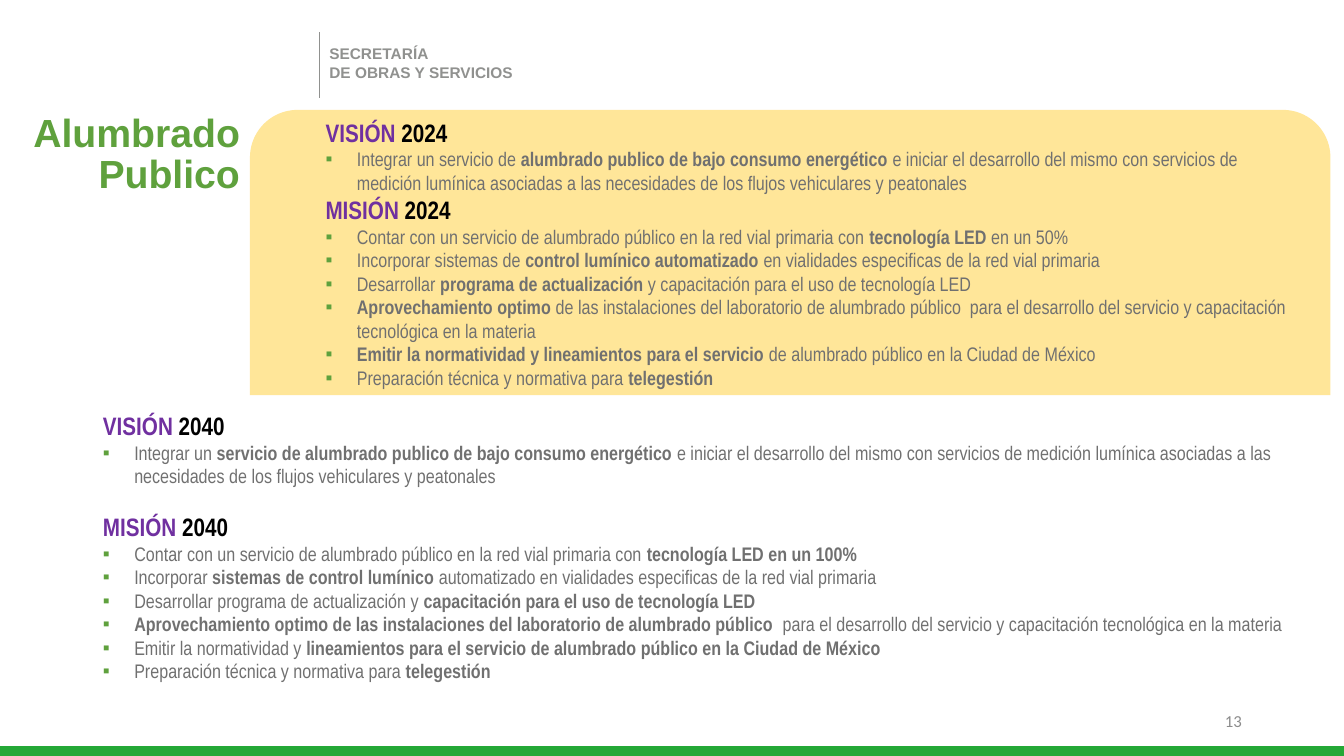
from lxml import etree
from pptx import Presentation
from pptx.dml.color import RGBColor
from pptx.enum.shapes import MSO_CONNECTOR, MSO_SHAPE
from pptx.enum.text import MSO_ANCHOR, MSO_AUTO_SIZE, PP_ALIGN
from pptx.oxml.ns import qn
from pptx.util import Cm, Pt

RECTANGLE = MSO_SHAPE.RECTANGLE
ROUND_TOP = MSO_SHAPE.ROUND_2_SAME_RECTANGLE
STRAIGHT = MSO_CONNECTOR.STRAIGHT
TOP, MIDDLE = MSO_ANCHOR.TOP, MSO_ANCHOR.MIDDLE
LEFT, RIGHT = PP_ALIGN.LEFT, PP_ALIGN.RIGHT
NO_AUTOFIT = MSO_AUTO_SIZE.NONE

GREEN, PURPLE, GRAY = "5FA13D", "7030A0", "707070"
WIDTH, HEIGHT = 33.87, 19.05
HEADING_INDENT, TEXT_INDENT = 1.27, 2.06

GOALS_2024 = [
    ("VISIÓN", [
        "Integrar un servicio de **alumbrado publico de bajo consumo energético **e iniciar el desarrollo del mismo "
        "con servicios de medición lumínica asociadas a las necesidades de los flujos vehiculares y peatonales",
    ]),
    ("MISIÓN", [
        "Contar con un servicio de alumbrado público en la red vial primaria con **tecnología LED **en un 50%",
        "Incorporar sistemas de **control lumínico automatizado **en vialidades especificas de la red vial primaria",
        "Desarrollar **programa de actualización **y capacitación para el uso de tecnología LED",
        "**Aprovechamiento optimo **de las instalaciones del laboratorio de alumbrado público  para el desarrollo "
        "del servicio y capacitación tecnológica en la materia",
        "**Emitir la normatividad y lineamientos para el servicio **de alumbrado público en la Ciudad de México",
        "Preparación técnica y normativa para **telegestión**",
    ]),
]
GOALS_2040 = [
    ("VISIÓN", [
        "Integrar un **servicio de alumbrado publico de bajo consumo energético **e iniciar el desarrollo del mismo "
        "con servicios de medición lumínica asociadas a las necesidades de los flujos vehiculares y peatonales",
    ]),
    ("MISIÓN", [
        "Contar con un servicio de alumbrado público en la red vial primaria con **tecnología LED en un 100%**",
        "Incorporar **sistemas de control lumínico **automatizado en vialidades especificas de la red vial primaria",
        "Desarrollar programa de actualización y **capacitación para el uso de tecnología LED**",
        "**Aprovechamiento optimo de las instalaciones del laboratorio de alumbrado público  **para el desarrollo "
        "del servicio y capacitación tecnológica en la materia",
        "Emitir la normatividad y **lineamientos para el servicio de alumbrado público en la Ciudad de México**",
        "Preparación técnica y normativa para **telegestión**",
    ]),
]


def color(value):
    return RGBColor.from_string(value)


def place(shape, left, top, width, height):
    shape.left, shape.top = Cm(left), Cm(top)
    shape.width, shape.height = Cm(width), Cm(height)


def style_font(font, name, size, value, bold=False):
    font.name, font.size, font.bold = name, Pt(size), bold
    font.color.rgb = color(value)


def prepare_frame(frame, anchor):
    frame.word_wrap = True
    frame.auto_size = NO_AUTOFIT
    frame.vertical_anchor = anchor


def add_block(page, kind, area, fill):
    block = page.shapes.add_shape(kind, *map(Cm, area))
    block.shadow.inherit = False
    block.fill.solid()
    block.fill.fore_color.rgb = color(fill)
    block.line.fill.background()
    return block


def add_divider(page, x, top, bottom):
    divider = page.shapes.add_connector(STRAIGHT, Cm(x), Cm(top), Cm(x), Cm(bottom))
    divider.line.color.rgb = color("90918F")
    divider.line.width = Pt(1)
    etree.SubElement(divider.element.spPr, qn("a:effectLst"))


def fill_text(box, area, text, font, alignment=LEFT, anchor=TOP, line_spacing=None):
    place(box, *area)
    frame = box.text_frame
    prepare_frame(frame, anchor)
    frame.text = text
    for para in frame.paragraphs:
        para.alignment = alignment
        para.line_spacing = line_spacing
        for span in para.runs:
            style_font(span.font, *font)


def set_bullet(para, indent, hanging, character=None):
    properties = para._p.get_or_add_pPr()
    properties.set("marL", str(Cm(indent)))
    properties.set("indent", str(-Cm(hanging)))
    if character is None:
        etree.SubElement(properties, qn("a:buNone"))
        return
    tint = etree.SubElement(properties, qn("a:buClr"))
    etree.SubElement(tint, qn("a:srgbClr"), val=GREEN)
    etree.SubElement(properties, qn("a:buFont"), typeface="Arial")
    etree.SubElement(properties, qn("a:buChar"), char=character)


def add_span(para, text, size, value, bold):
    span = para.add_run()
    span.text = text
    style_font(span.font, "Arial Narrow", size, value, bold)


def write_heading(para, name, year, gap):
    set_bullet(para, HEADING_INDENT, 0)
    para.space_before = Pt(gap)
    add_span(para, name + " ", 18, PURPLE, True)
    add_span(para, year, 18, "000000", True)


def write_item(para, text):
    set_bullet(para, TEXT_INDENT, TEXT_INDENT - HEADING_INDENT, "▪")
    para.space_before = Pt(0)
    for index, part in enumerate(text.split("**")):
        if part:
            add_span(para, part, 14, GRAY, index % 2 == 1)


def fill_goals(body, area, year, goals, gap):
    place(body, *area)
    frame = body.text_frame
    prepare_frame(frame, TOP)
    for index, (name, items) in enumerate(goals):
        para = frame.add_paragraph() if index else frame.paragraphs[0]
        write_heading(para, name, year, gap if index else 0)
        for item in items:
            write_item(frame.add_paragraph(), item)


def main():
    deck = Presentation()
    deck.slide_width, deck.slide_height = Cm(WIDTH), Cm(HEIGHT)
    page = deck.slides.add_slide(deck.slide_layouts[3])
    title, near_goals, far_goals = page.placeholders

    panel = add_block(page, ROUND_TOP, (6.3, 2.77, 27.23, 7.19), "FFE699")
    title.element.addprevious(panel.element)
    add_block(page, RECTANGLE, (0, 18.8, WIDTH, 0.25), "24A836")
    add_divider(page, 8.05, 0.81, 2.46)

    fill_text(title, (-1.45, 2.77, 7.75, 2.31), "Alumbrado Publico",
              ("Arial", 28, GREEN, True), RIGHT, line_spacing=Pt(29))
    header = page.shapes.add_textbox(0, 0, 0, 0)
    fill_text(header, (8.05, 0.99, 5.41, 1.68), "SECRETARÍA\nDE OBRAS Y SERVICIOS",
              ("Arial", 11, "90918F", True))
    number = page.shapes.add_textbox(0, 0, 0, 0)
    fill_text(number, (23.93, 17.65, 7.62, 1.02), "13", ("Calibri", 12, "8C8C8C"), RIGHT, MIDDLE)

    fill_goals(near_goals, (6.68, 2.82, 26.31, 7.14), "2024", GOALS_2024, 0)
    fill_goals(far_goals, (1.07, 10.21, 31.65, 7.3), "2040", GOALS_2040, 17)
    deck.save("out.pptx")


if __name__ == "__main__":
    main()
